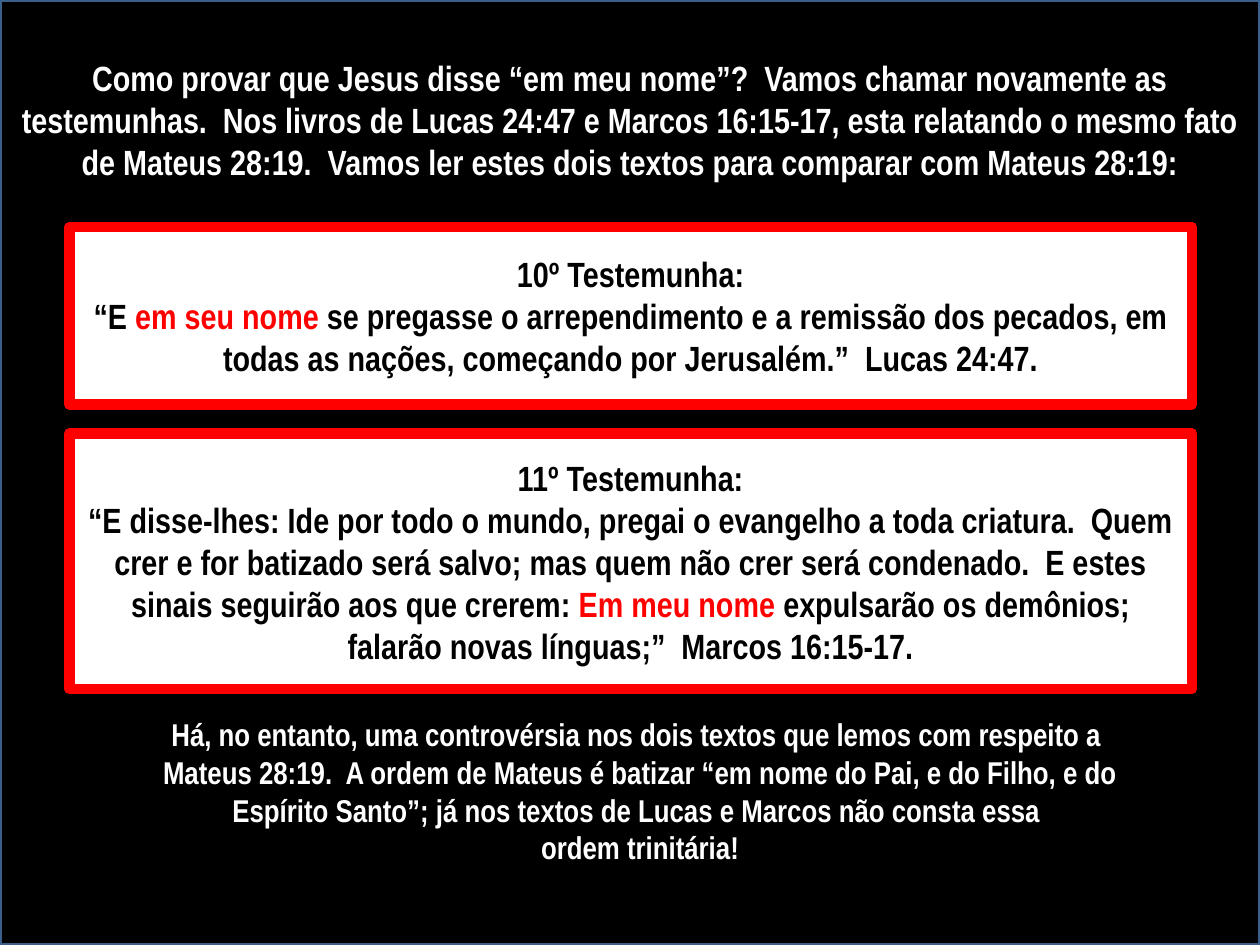
from pptx import Presentation
from pptx.dml.color import RGBColor
from pptx.enum.shapes import MSO_SHAPE
from pptx.enum.text import MSO_ANCHOR, PP_ALIGN
from pptx.util import Inches, Pt

BLACK, WHITE, RED, BLUE = "000000", "FFFFFF", "FF0000", "3A5F8C"


def color(value):
    return RGBColor.from_string(value)


def write(frame, paragraphs, size, text_color):
    frame.word_wrap = True
    for index, runs in enumerate(paragraphs):
        paragraph = frame.paragraphs[0] if index == 0 else frame.add_paragraph()
        paragraph.alignment = PP_ALIGN.CENTER
        paragraph.font.name = "Arial Narrow"
        paragraph.font.size = Pt(size)
        paragraph.font.bold = True
        paragraph.font.color.rgb = color(text_color)
        for position, text in enumerate(runs):
            run = paragraph.add_run()
            run.text = text
            if position == 1:
                run.font.color.rgb = color(RED)


presentation = Presentation()
presentation.slide_width = Inches(10)
presentation.slide_height = Inches(7.5)
width, height = presentation.slide_width, presentation.slide_height
slide = presentation.slides.add_slide(presentation.slide_layouts[6])

intro = [[
    "Como provar que Jesus disse “em meu nome”?  Vamos chamar novamente as testemunhas.  "
    "Nos livros de Lucas 24:47 e Marcos 16:15-17, esta relatando o mesmo fato de Mateus 28:19.  "
    "Vamos ler estes dois textos para comparar com Mateus 28:19:"
]]
luke = [
    ["10º Testemunha:"],
    ["“E ", "em seu nome ",
     "se pregasse o arrependimento e a remissão dos pecados, em todas as nações, "
     "começando por Jerusalém.”  Lucas 24:47."],
]
mark = [
    ["11º Testemunha:"],
    ["“E disse-lhes: Ide por todo o mundo, pregai o evangelho a toda criatura.  "
     "Quem crer e for batizado será salvo; mas quem não crer será condenado.  "
     "E estes sinais seguirão aos que crerem: ",
     "Em meu nome ",
     "expulsarão os demônios; falarão novas línguas;”  Marcos 16:15-17."],
]
controversy = [
    ["Há, no entanto, uma controvérsia nos dois textos que lemos com respeito a "],
    ["Mateus 28:19.  A ordem de Mateus é batizar “em nome do Pai, e do Filho, e do"],
    ["Espírito Santo”; já nos textos de Lucas e Marcos não consta essa "],
    ["ordem trinitária!"],
]

panels = [
    (0, 0, 10, 7.5, BLACK, BLUE, 2, WHITE, intro),
    (0.55, 1.8, 8.91, 1.41, WHITE, RED, 6, BLACK, luke),
    (0.55, 3.44, 8.91, 2.03, WHITE, RED, 6, BLACK, mark),
]
for left, top, across, down, fill, line, weight, text_color, paragraphs in panels:
    shape = slide.shapes.add_shape(
        MSO_SHAPE.RECTANGLE,
        int(width * left / 10), int(height * top / 7.5),
        int(width * across / 10), int(height * down / 7.5),
    )
    shape.shadow.inherit = False
    shape.fill.solid()
    shape.fill.fore_color.rgb = color(fill)
    shape.line.color.rgb = color(line)
    shape.line.width = Pt(weight)
    frame = shape.text_frame
    frame.vertical_anchor = MSO_ANCHOR.MIDDLE
    if paragraphs is intro:
        frame.vertical_anchor = MSO_ANCHOR.TOP
        frame.margin_top = int(height * 0.06)
    write(frame, paragraphs, 20, text_color)

closing = slide.shapes.add_textbox(
    int(width * 0.047), int(height * 0.75), int(width * 0.922), int(height * 0.216)
)
write(closing.text_frame, controversy, 18, WHITE)

presentation.save("out.pptx")
